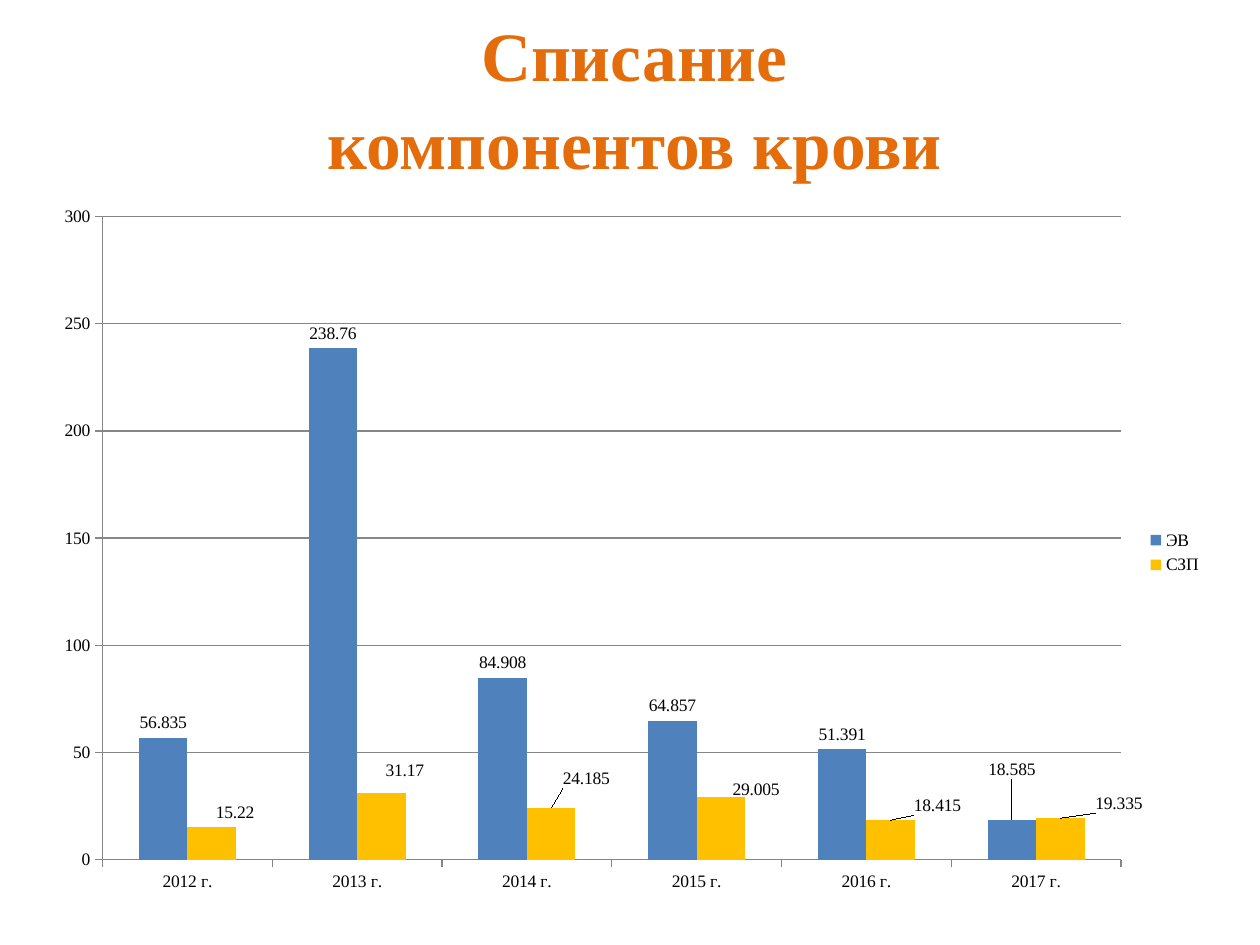
from lxml.etree import SubElement
from pptx import Presentation
from pptx.chart.data import CategoryChartData
from pptx.dml.color import RGBColor
from pptx.enum.chart import XL_CHART_TYPE, XL_LABEL_POSITION, XL_LEGEND_POSITION, XL_TICK_MARK
from pptx.enum.text import MSO_ANCHOR, PP_ALIGN
from pptx.oxml.ns import qn
from pptx.util import Inches, Pt

FONT = "Times New Roman"
COLORS = {"title": "E46C0A", "ЭВ": "4F81BD", "СЗП": "FFC000", "text": "000000", "rule": "868686"}
YEARS = [f"{year} г." for year in range(2012, 2018)]
WRITE_OFFS = {
    "ЭВ": [56.835, 238.76, 84.908, 64.857, 51.391, 18.585],
    "СЗП": [15.22, 31.17, 24.185, 29.005, 18.415, 19.335],
}
LABEL_SHIFTS = {
    "ЭВ": {5: (0, -0.05)},
    "СЗП": dict(enumerate([(0.02, 0), (0.02, -0.01), (0.03, -0.02), (0.03, 0.01), (0.04, 0), (0.05, 0)])),
}
PLOT_AREA = {"x": 0.05, "y": 0.03, "w": 0.87, "h": 0.9}


def color(key):
    """Return the named palette colour."""
    return RGBColor.from_string(COLORS[key])


def style_font(font, size, key, bold=False):
    """Apply the slide typeface with a size and palette colour."""
    font.name, font.size, font.bold = FONT, Pt(size), bold
    font.color.rgb = color(key)


def set_layout(layout, values):
    """Fill a chart layout element with manual settings."""
    manual = SubElement(layout, qn("c:manualLayout"))
    for tag, value in values.items():
        SubElement(manual, qn(f"c:{tag}")).set("val", str(value))


def add_title(slide, box):
    """Place the heading in the title placeholder."""
    title = slide.shapes.title
    title.left, title.top, title.width, title.height = box
    frame = title.text_frame
    frame.word_wrap = True
    frame.vertical_anchor = MSO_ANCHOR.MIDDLE
    heading = frame.paragraphs[0]
    heading.alignment = PP_ALIGN.CENTER
    heading.line_spacing = 1.05
    run = heading.add_run()
    run.text = "Списание компонентов крови"
    style_font(run.font, 39.6, "title", True)


def style_series(series):
    """Colour one series, show its values and shift its crowded labels."""
    series.format.fill.solid()
    series.format.fill.fore_color.rgb = color(series.name)
    labels = series.data_labels
    labels.show_value = True
    labels.position = XL_LABEL_POSITION.OUTSIDE_END
    style_font(labels.font, 10, "text")
    shifts = LABEL_SHIFTS[series.name]
    for index in shifts:
        label = series.points[index].data_label
        label.position = XL_LABEL_POSITION.OUTSIDE_END
        style_font(label.font, 10, "text")
    for point in series._element.iter(qn("c:dLbl")):
        number = point.find(qn("c:idx"))
        dx, dy = shifts[int(number.get("val"))]
        layout = SubElement(point, qn("c:layout"))
        number.addnext(layout)
        set_layout(layout, {"x": dx, "y": dy})


def add_write_off_chart(slide, box):
    """Place the clustered columns of yearly write-offs."""
    data = CategoryChartData()
    data.categories = YEARS
    for name, values in WRITE_OFFS.items():
        data.add_series(name, values)
    chart = slide.shapes.add_chart(XL_CHART_TYPE.COLUMN_CLUSTERED, *box, data).chart
    chart.has_title = False
    style_font(chart.font, 10, "text")
    chart.has_legend = True
    chart.legend.position = XL_LEGEND_POSITION.RIGHT
    chart.legend.include_in_layout = False

    values_axis = chart.value_axis
    values_axis.minimum_scale, values_axis.maximum_scale, values_axis.major_unit = 0, 300, 50
    values_axis.has_major_gridlines = True
    for axis in (chart.category_axis, values_axis):
        axis.major_tick_mark = XL_TICK_MARK.OUTSIDE
    for ruled in (chart.category_axis, values_axis, values_axis.major_gridlines):
        ruled.format.line.color.rgb = color("rule")
        ruled.format.line.width = Pt(0.75)

    plot = chart.plots[0]
    plot.gap_width, plot.overlap, plot.vary_by_categories = 150, 0, False
    for series in plot.series:
        style_series(series)

    plot_area = chart._chartSpace.find(f".//{qn('c:plotArea')}")
    layout = plot_area.find(qn("c:layout"))
    if layout is None:
        layout = SubElement(plot_area, qn("c:layout"))
        plot_area.insert(0, layout)
    set_layout(layout, {"layoutTarget": "inner", "xMode": "edge", "yMode": "edge", **PLOT_AREA})


def main():
    """Build and save the slide."""
    deck = Presentation()
    deck.slide_width, deck.slide_height = Inches(10), Inches(7.5)
    slide = deck.slides.add_slide(deck.slide_layouts[5])
    add_title(slide, [Inches(n) for n in (2.32, 0.13, 5.43, 1.26)])
    add_write_off_chart(slide, [Inches(n) for n in (0.35, 1.55, 9.29, 5.67)])
    deck.save("out.pptx")


if __name__ == "__main__":
    main()
